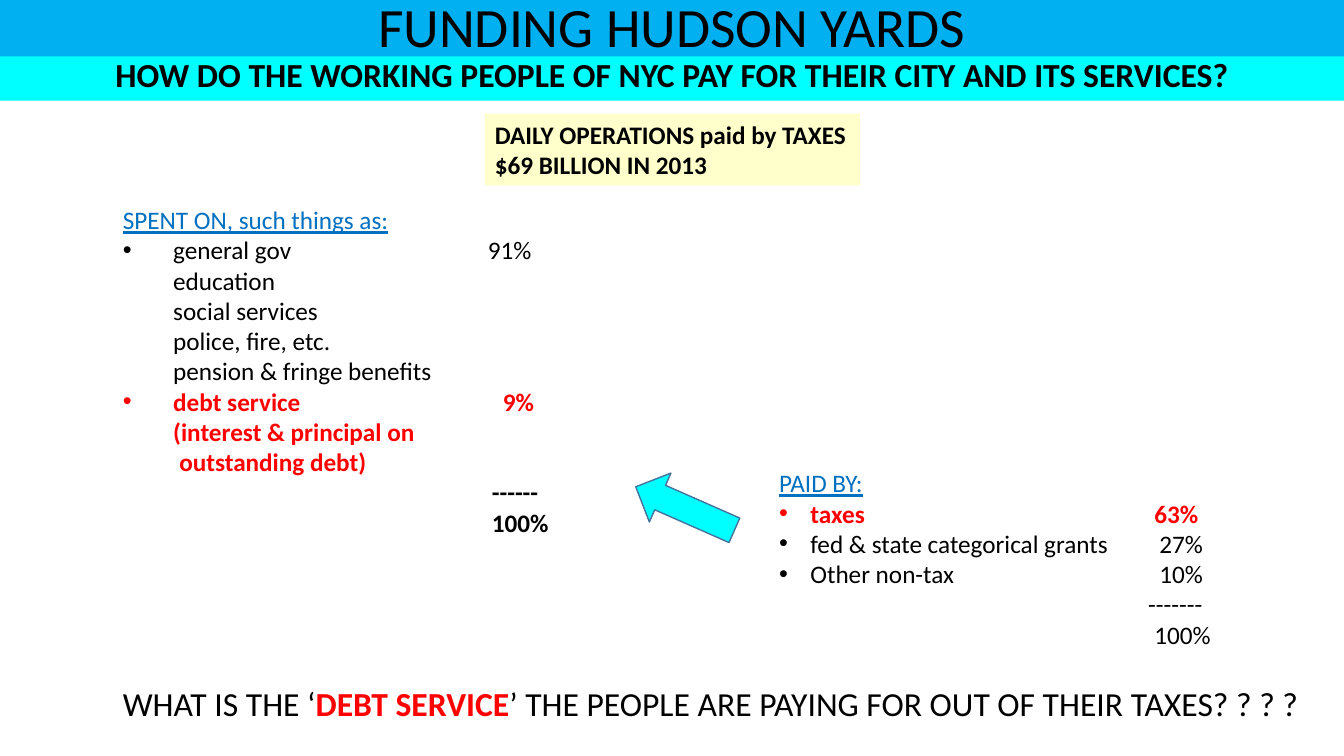
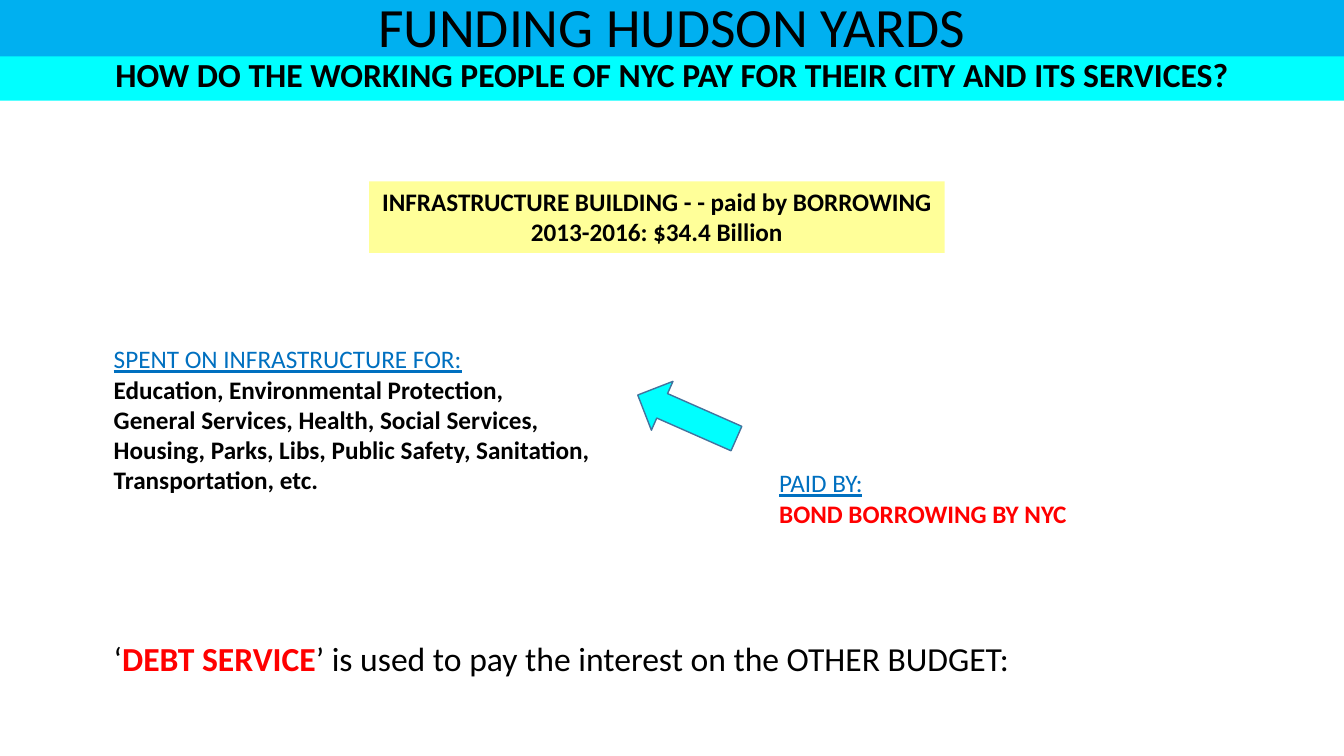
import pptx
import pptx.util
import pptx.dml.color
import pptx.enum.shapes
import pptx.enum.text
import lxml.etree
from pptx.dml.color import RGBColor
from pptx.enum.text import MSO_ANCHOR, MSO_AUTO_SIZE, PP_ALIGN
from pptx.util import Inches

FONT = "Calibri"
BLACK = RGBColor(0x00, 0x00, 0x00)
RED = RGBColor(0xFF, 0x00, 0x00)
HEADING_BLUE = RGBColor(0x00, 0x70, 0xC0)
TITLE_BLUE = RGBColor(0x00, 0xB0, 0xF0)
CYAN = RGBColor(0x00, 0xFF, 0xFF)
ARROW_LINE = RGBColor(0x43, 0x73, 0x9E)
PALE_YELLOW = RGBColor(0xFF, 0xFF, 0xCC)
YELLOW = RGBColor(0xFF, 0xFF, 0x99)
LINE_POINTS = 21.6
LINE_HEIGHT = 0.3
SLIDE_WIDTH = 13.33


def add_box(slide, left, top, width, height, fill=None):
    shape = slide.shapes.add_textbox(Inches(left), Inches(top), Inches(width), Inches(height))
    shape.text_frame.word_wrap = True
    if fill is not None:
        shape.fill.solid()
        shape.fill.fore_color.rgb = fill
    return shape.text_frame


def write(frame, text, size=18, color=BLACK, bold=False, underline=False, align=PP_ALIGN.LEFT,
          line_spacing=None, lines_before=0, indent=0, bullet=False, same_paragraph=False):
    paragraph = frame.paragraphs[-1]
    if paragraph.runs and not same_paragraph:
        paragraph = frame.add_paragraph()
    if not same_paragraph:
        paragraph.alignment = align
        if line_spacing:
            paragraph.line_spacing = line_spacing
        if lines_before:
            paragraph.space_before = pptx.util.Pt(lines_before * LINE_POINTS)
        properties = paragraph._p.get_or_add_pPr()
        if indent:
            properties.set("marL", str(Inches(indent)))
        if bullet:
            properties.set("indent", str(-Inches(indent)))
            namespace = pptx.oxml.ns.qn("a:buFont")
            lxml.etree.SubElement(properties, namespace).set("typeface", "Arial")
            lxml.etree.SubElement(properties, pptx.oxml.ns.qn("a:buChar")).set("char", "•")
    run = paragraph.add_run()
    run.text = text
    run.font.name = FONT
    run.font.size = pptx.util.Pt(size)
    run.font.bold = bold
    run.font.underline = underline
    run.font.color.rgb = color


presentation = pptx.Presentation()
presentation.slide_width = Inches(SLIDE_WIDTH)
presentation.slide_height = Inches(7.5)

slides = []
for arrow_left, arrow_top in [(6.53, 4.51), (6.55, 3.6)]:
    slide = presentation.slides.add_slide(presentation.slide_layouts[5])
    slides.append(slide)

    title = slide.shapes.title
    title.left, title.top = Inches(0), Inches(0)
    title.width, title.height = Inches(SLIDE_WIDTH), Inches(0.58)
    title.fill.solid()
    title.fill.fore_color.rgb = TITLE_BLUE
    title.text_frame.auto_size = MSO_AUTO_SIZE.NONE
    title.text_frame.vertical_anchor = MSO_ANCHOR.MIDDLE
    write(title.text_frame, "FUNDING HUDSON YARDS", size=39.6, align=PP_ALIGN.CENTER,
          line_spacing=0.9)

    subtitle = add_box(slide, 0, 0.56, SLIDE_WIDTH, 0.44, fill=CYAN)
    write(subtitle, "HOW DO THE WORKING PEOPLE OF NYC PAY FOR THEIR CITY AND ITS SERVICES?",
          size=24, bold=True, align=PP_ALIGN.CENTER, line_spacing=0.8)

    arrow = slide.shapes.add_shape(pptx.enum.shapes.MSO_SHAPE.UP_ARROW, Inches(arrow_left),
                                   Inches(arrow_top), Inches(0.53), Inches(1.07))
    arrow.rotation = 293.8
    arrow.shadow.inherit = False
    arrow.fill.solid()
    arrow.fill.fore_color.rgb = CYAN
    arrow.line.color.rgb = ARROW_LINE
    arrow.line.width = pptx.util.Pt(1)

operations, infrastructure = slides

budget = add_box(operations, 4.81, 1.13, 3.72, 0.71, fill=PALE_YELLOW)
for text in ["DAILY OPERATIONS paid by TAXES", "$69 BILLION IN 2013"]:
    write(budget, text, bold=True)

spending = add_box(operations, 1.12, 1.98, 3.6, 2.83)
write(spending, "SPENT ON, such things as:", color=HEADING_BLUE, underline=True)
write(spending, "general gov", indent=0.5, bullet=True)
for text in ["education", "social services", "police, fire, etc.", "pension & fringe benefits"]:
    write(spending, text, indent=0.5)
write(spending, "debt service", color=RED, bold=True, indent=0.5, bullet=True)
write(spending, "(interest & principal on", color=RED, bold=True, indent=0.5)
write(spending, "outstanding debt)", color=RED, bold=True, indent=0.56)

spending_shares = add_box(operations, 4.74, 1.98 + LINE_HEIGHT, 1, 3.1)
write(spending_shares, "91%")
write(spending_shares, "9%", color=RED, bold=True, indent=0.15, lines_before=4)
write(spending_shares, "------", bold=True, indent=0.04, lines_before=2)
write(spending_shares, "100%", bold=True, indent=0.04)

income = add_box(operations, 7.63, 4.59, 3.65, 1.3)
write(income, "PAID BY:", color=HEADING_BLUE, underline=True)
write(income, "taxes", color=RED, bold=True, indent=0.31, bullet=True)
for text in ["fed & state categorical grants", "Other non-tax"]:
    write(income, text, indent=0.31, bullet=True)

income_shares = add_box(operations, 11.29, 4.59 + LINE_HEIGHT, 1, 1.6)
write(income_shares, "63%", color=RED, bold=True, indent=0.06)
for text, indent in [("27%", 0.11), ("10%", 0.11), ("-------", 0), ("100%", 0.06)]:
    write(income_shares, text, indent=indent)

budget = add_box(infrastructure, 3.66, 1.8, 5.71, 0.71, fill=YELLOW)
write(budget, "INFRASTRUCTURE BUILDING - - paid by BORROWING", bold=True, align=PP_ALIGN.CENTER)
write(budget, "2013-2016:\u2003$34.4 Billion".replace("\u2003", " "), bold=True,
      align=PP_ALIGN.CENTER)

spending = add_box(infrastructure, 1.03, 3.36, 5.2, 1.62)
write(spending, "SPENT ON INFRASTRUCTURE FOR:", color=HEADING_BLUE, underline=True)
for text in ["Education, Environmental Protection,",
             "General Services, Health, Social Services,",
             "Housing, Parks, Libs, Public Safety, Sanitation,",
             "Transportation, etc."]:
    write(spending, text, bold=True)

income = add_box(infrastructure, 7.63, 4.59, 3.2, 0.71)
write(income, "PAID BY:", color=HEADING_BLUE, underline=True)
write(income, "BOND BORROWING BY NYC", color=RED, bold=True)

for slide, left, top, opening, ending in [
    (operations, 1.12, 6.73, "WHAT IS THE ‘",
     "’ THE PEOPLE ARE PAYING FOR OUT OF THEIR TAXES? ? ? ?"),
    (infrastructure, 1.03, 6.28, "‘",
     "’ is used to pay the interest on the OTHER BUDGET:"),
]:
    statement = add_box(slide, left, top, 12.1, 0.5)
    write(statement, opening, size=24)
    write(statement, "DEBT SERVICE", size=24, color=RED, bold=True, same_paragraph=True)
    write(statement, ending, size=24, same_paragraph=True)

presentation.save("out.pptx")
